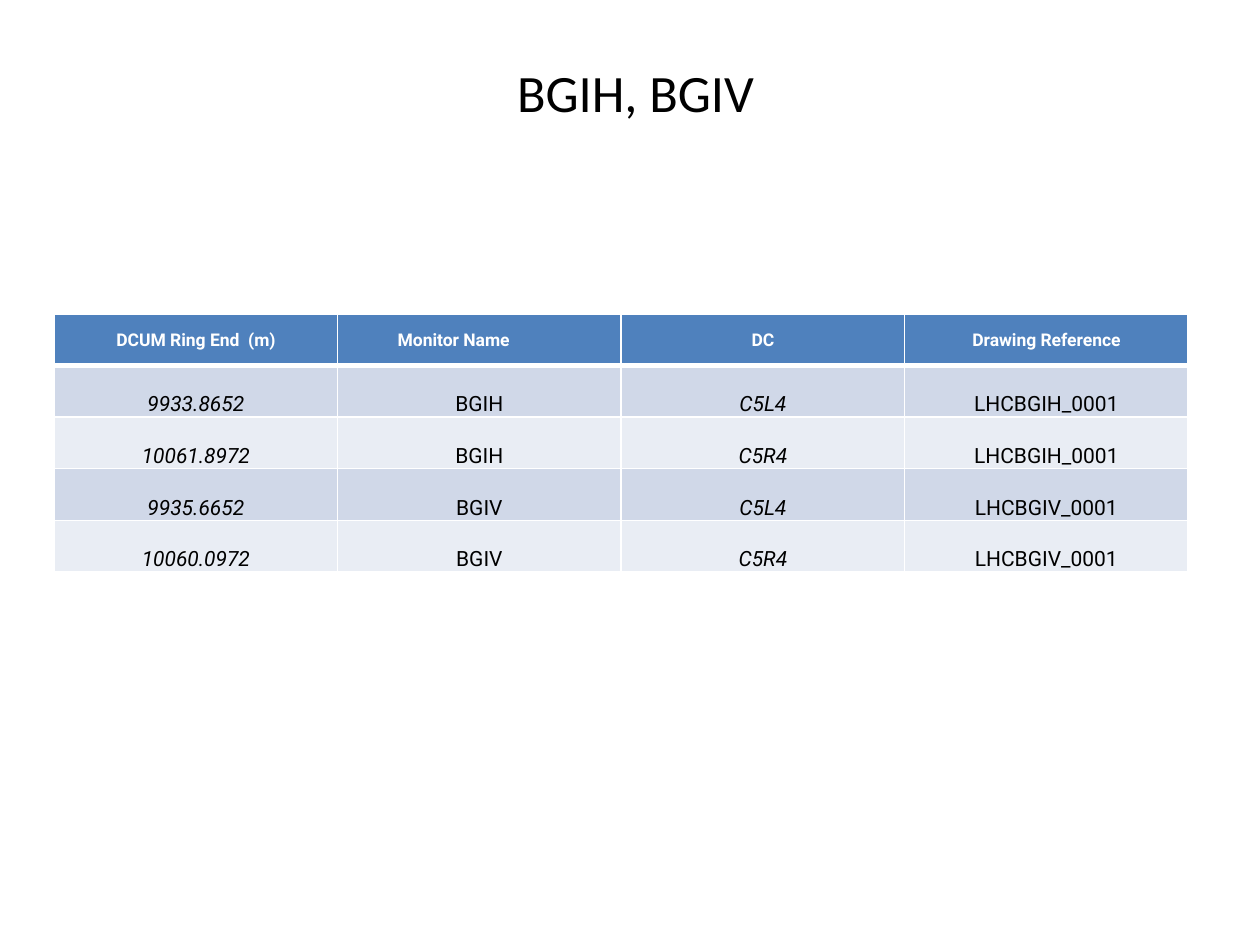
import pptx
import pptx.dml.color
import pptx.enum.text
import pptx.oxml
import pptx.oxml.ns
import pptx.util

ANCHOR = pptx.enum.text.MSO_ANCHOR
CENTER = pptx.enum.text.PP_ALIGN.CENTER
SLIDE_W, SLIDE_H = 10, 7.5
COL_W, ROW_H = 2.25, 0.41
HEADER_FILL, BAND_FILLS = "4F81BD", ("D0D8E8", "E9EDF4")

HEADERS = ["DCUM Ring End  (m)", "Monitor Name", "DC", "Drawing Reference"]
MONITORS = [
    ["9933.8652", "BGIH", "C5L4", "LHCBGIH_0001"],
    ["10061.8972", "BGIH", "C5R4", "LHCBGIH_0001"],
    ["9935.6652", "BGIV", "C5L4", "LHCBGIV_0001"],
    ["10060.0972", "BGIV", "C5R4", "LHCBGIV_0001"],
]
HEADER_FONT = {"name": "Roboto", "size": 10, "bold": True, "color": "FFFFFF"}
BODY_FONT = {"name": "Roboto", "size": 12, "bold": False, "color": "000000"}
TITLE_FONT = {"name": "Calibri", "size": 30, "color": "000000"}


def rgb(value):
    return pptx.dml.color.RGBColor.from_string(value)


def write(tf, text, fmt):
    p = tf.paragraphs[0]
    p.alignment = CENTER
    r = p.add_run()
    r.text = text
    for key, value in fmt.items():
        if key == "color":
            r.font.color.rgb = rgb(value)
        else:
            setattr(r.font, key, pptx.util.Pt(value) if key == "size" else value)


def add_title(s, text):
    sp = s.shapes.add_textbox(*map(pptx.util.Inches, (1.54, 0.3, 7.01, 0.85)))
    tf = sp.text_frame
    tf.word_wrap = True
    tf.vertical_anchor = ANCHOR.MIDDLE
    write(tf, text, TITLE_FONT)


def set_borders(cell, color, bottom=1):
    tc_pr = cell._tc.get_or_add_tcPr()
    for side, width in {"L": 1, "R": 1, "T": 1, "B": bottom}.items():
        tc_pr.append(pptx.oxml.parse_xml(
            f'<a:ln{side} {pptx.oxml.ns.nsdecls("a")} w="{pptx.util.Pt(width)}">'
            f'<a:solidFill><a:srgbClr val="{color}"/></a:solidFill></a:ln{side}>'))


def style_cell(cell, text, fmt, fill, anchor, bottom=1, right=0.01):
    margins = {"left": 0.01, "top": 0.01, "right": right, "bottom": 0}
    for side, value in margins.items():
        setattr(cell, f"margin_{side}", pptx.util.Inches(value))
    cell.vertical_anchor = anchor
    set_borders(cell, "FFFFFF", bottom)
    cell.fill.solid()
    cell.fill.fore_color.rgb = rgb(fill)
    write(cell.text_frame, text, fmt)


def add_monitor_table(s):
    rows, cols = len(MONITORS) + 1, len(HEADERS)
    box = (0.43, 2.49, cols * COL_W, rows * ROW_H)
    table = s.shapes.add_table(rows, cols, *map(pptx.util.Inches, box)).table

    # Header row; the monitor name sits left of its column's centre
    for c, text in enumerate(HEADERS):
        style_cell(table.cell(0, c), text, HEADER_FONT, HEADER_FILL, ANCHOR.MIDDLE,
                   bottom=3, right=0.42 if text == "Monitor Name" else 0.01)

    # Banded body rows; positions and DC codes are italic
    for i, record in enumerate(MONITORS):
        for c, text in enumerate(record):
            fmt = {**BODY_FONT, "italic": c % 2 == 0}
            style_cell(table.cell(i + 1, c), text, fmt, BAND_FILLS[i % 2], ANCHOR.BOTTOM)


def main():
    prs = pptx.Presentation()
    prs.slide_width = pptx.util.Inches(SLIDE_W)
    prs.slide_height = pptx.util.Inches(SLIDE_H)
    s = prs.slides.add_slide(prs.slide_layouts[6])
    add_title(s, "BGIH, BGIV")
    add_monitor_table(s)
    prs.save("out.pptx")


if __name__ == "__main__":
    main()
